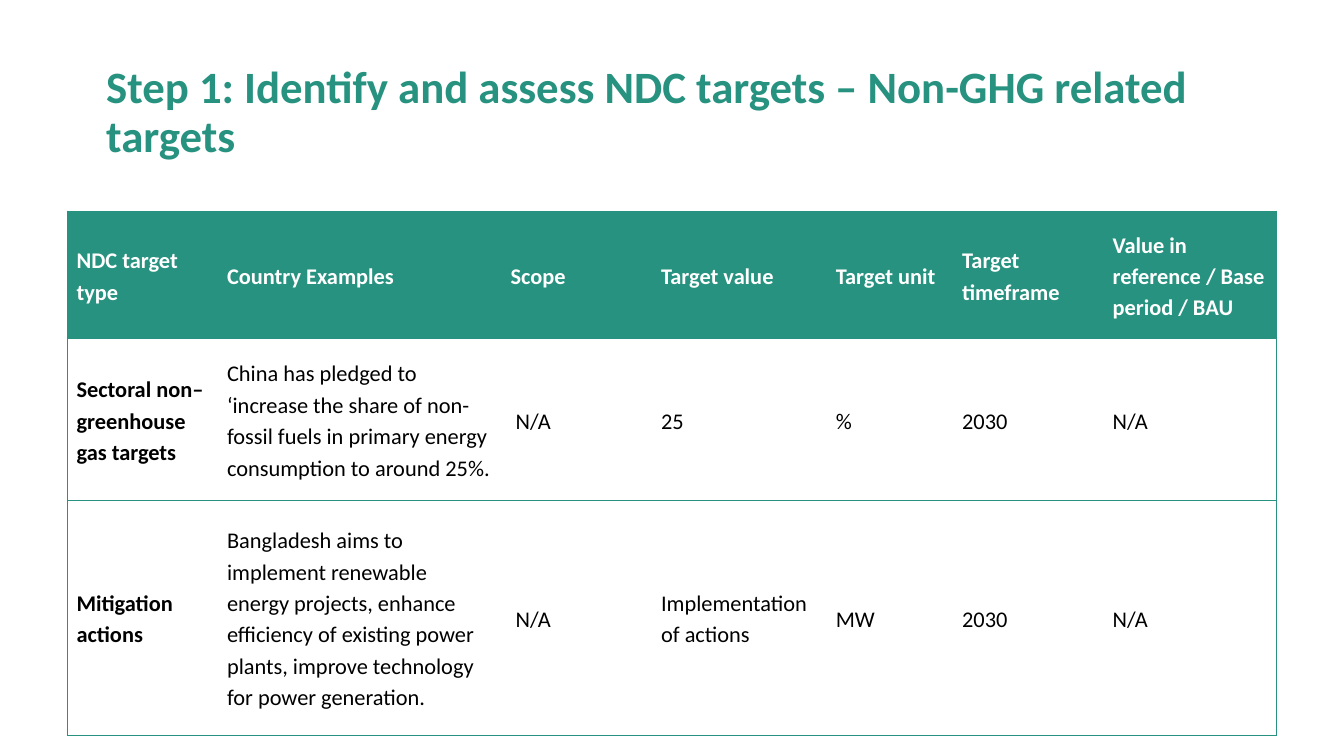
from pptx import Presentation
from pptx.dml.color import RGBColor
from pptx.enum.text import MSO_ANCHOR as Anchor, MSO_AUTO_SIZE as Fit, PP_ALIGN as Align
from pptx.oxml.ns import qn
from pptx.util import Pt
from lxml.etree import SubElement

PX = 9144  # EMU per px, 100 px to the inch
GREEN, WHITE, BLACK = "26927F", "FFFFFF", "000000"
PLAIN = "{2D5ABB26-0587-4C30-8999-92F81FD0307C}"  # no style, no grid

COLS = [112, 211, 112, 130, 94, 112, 129]
ROWS = [95, 120, 175]
CELLS = [
    ["NDC target type", "Country Examples", "Scope", "Target value",
     "Target unit", "Target timeframe", "Value in reference / Base period / BAU"],
    ["Sectoral non–greenhouse gas targets",
     "China has pledged to ‘increase the share of non-fossil fuels in primary "
     "energy consumption to around 25%.",
     " N/A", "25", "%", "2030", "N/A"],
    ["Mitigation actions",
     "Bangladesh aims to implement renewable energy projects, enhance efficiency "
     "of existing power plants, improve technology for power generation.",
     " N/A", "Implementation of actions", "MW", "2030", "N/A"],
]


def px(*nums):
    return [num * PX for num in nums]


def rgb(code):
    return RGBColor.from_string(code)


def write(frame, text, size=12, color=BLACK, bold=False, line=1.15, before=3, after=3):
    frame.word_wrap = True
    para = frame.paragraphs[0]
    para.alignment = Align.LEFT
    para.line_spacing = line
    para.space_before, para.space_after = Pt(before), Pt(after)
    run = para.add_run()
    run.text = text
    font = run.font
    font.name, font.size, font.bold = "Calibri", Pt(size), bold
    font.color.rgb = rgb(color)


def edge(cell, sides):
    """Draw a thin green border on the given sides, in the order L, R, T, B."""
    props = cell._tc.get_or_add_tcPr()
    for side in sides:
        line = SubElement(props, qn(f"a:ln{side}"), w=str(Pt(0.5)))
        fill = SubElement(line, qn("a:solidFill"))
        SubElement(fill, qn("a:srgbClr"), val=GREEN)


def add_title(slide, text):
    title = slide.shapes.title
    title.left, title.top, title.width, title.height = px(69, 30, 862, 109)
    frame = title.text_frame
    frame.auto_size = Fit.NONE
    frame.vertical_anchor = Anchor.MIDDLE
    write(frame, text, size=24, color=GREEN, bold=True, line=0.9, before=0, after=0)


def add_grid(slide):
    box = px(50, 157, sum(COLS), sum(ROWS))
    table = slide.shapes.add_table(len(ROWS), len(COLS), *box).table
    table.first_row = table.horz_banding = False
    table._tbl.tblPr.find(qn("a:tableStyleId")).text = PLAIN
    for col, width in zip(table.columns, px(*COLS)):
        col.width = width
    for row, height in zip(table.rows, px(*ROWS)):
        row.height = height
    for r, texts in enumerate(CELLS):
        for c, text in enumerate(texts):
            fill_cell(table.cell(r, c), text, r, c)


def fill_cell(cell, text, r, c):
    head = r == 0
    left = "L" if c == 0 else ""
    right = "R" if c == len(COLS) - 1 else ""
    edge(cell, left + right + "TB")
    if head:
        cell.fill.solid()
        cell.fill.fore_color.rgb = rgb(GREEN)
    else:
        cell.fill.background()
    cell.vertical_anchor = Anchor.MIDDLE
    cell.margin_left, cell.margin_right = px(7, 7)
    cell.margin_top = cell.margin_bottom = 0
    write(cell.text_frame, text, color=WHITE if head else BLACK,
          bold=head or c == 0, after=0 if (r, c) == (1, 1) else 3)


def main():
    deck = Presentation()
    wide, = px(1000)
    deck.slide_width, deck.slide_height = wide, wide * 9 // 16
    slide = deck.slides.add_slide(deck.slide_layouts[5])
    add_title(slide, "Step 1: Identify and assess NDC targets – Non-GHG related targets")
    add_grid(slide)
    deck.save("out.pptx")


if __name__ == "__main__":
    main()
